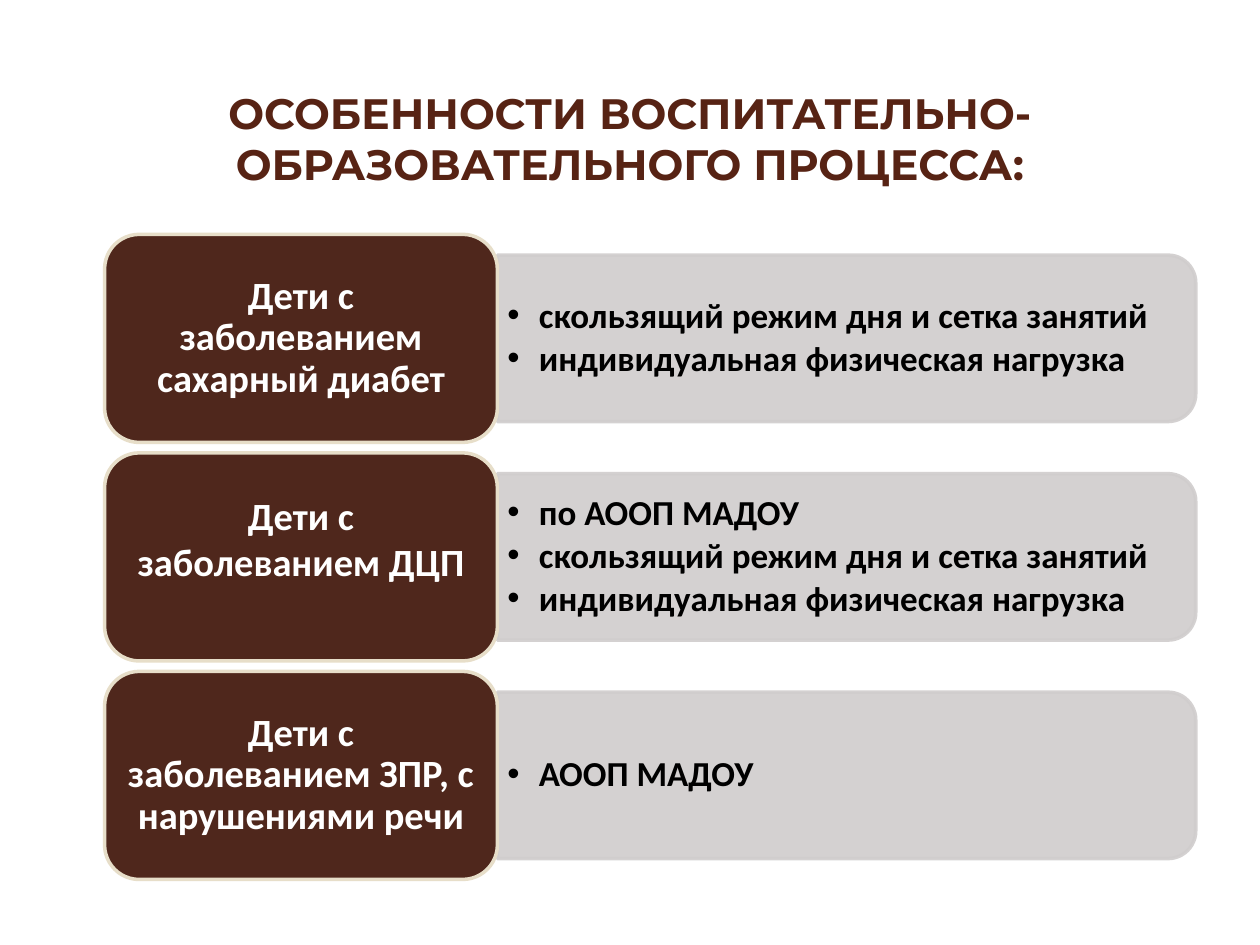
from dataclasses import dataclass

from lxml.etree import SubElement
from pptx import Presentation
from pptx.dml.color import RGBColor
from pptx.enum.shapes import MSO_SHAPE
from pptx.enum.text import MSO_ANCHOR, PP_ALIGN
from pptx.oxml.ns import qn
from pptx.util import Inches, Pt


@dataclass(frozen=True)
class Theme:
    title_color: RGBColor = RGBColor(0x57, 0x23, 0x14)
    label_fill: RGBColor = RGBColor(0x4F, 0x27, 0x1C)
    label_line: RGBColor = RGBColor(0xE7, 0xDE, 0xC9)
    label_text: RGBColor = RGBColor(0xFF, 0xFF, 0xFF)
    panel: RGBColor = RGBColor(0xD0, 0xCD, 0xCD)
    panel_text: RGBColor = RGBColor(0, 0, 0)
    title_font: str = "Montserrat"
    body_font: str = "Calibri"
    title_size: float = 24.3
    label_size: float = 22
    panel_size: float = 20
    outline: float = 2


THEME = Theme()

TITLE = "ОСОБЕННОСТИ ВОСПИТАТЕЛЬНО-ОБРАЗОВАТЕЛЬНОГО ПРОЦЕССА:"
SCHEDULE = "скользящий режим дня и сетка занятий"
EXERCISE = "индивидуальная физическая нагрузка"
# Label, its line spacing, extra room under it, measures
GROUPS = [
    ("Дети с заболеванием сахарный диабет", 0.9, 0, [SCHEDULE, EXERCISE]),
    ("Дети с заболеванием ДЦП", 1.0, 0.3, ["по АООП МАДОУ", SCHEDULE, EXERCISE]),
    ("Дети с заболеванием ЗПР, с нарушениями речи", 0.9, 0, ["АООП МАДОУ"]),
]


def add_run(paragraph, text, font, size, color):
    run = paragraph.add_run()
    run.text = text
    run.font.name = font
    run.font.size = Pt(size)
    run.font.bold = True
    run.font.color.rgb = color


def set_frame(frame, anchor, side, top, bottom):
    frame.word_wrap = True
    frame.vertical_anchor = anchor
    frame.margin_left = frame.margin_right = Inches(side)
    frame.margin_top, frame.margin_bottom = Inches(top), Inches(bottom)


def paint(shape, fill, line):
    shape.shadow.inherit = False
    shape.fill.solid()
    shape.fill.fore_color.rgb = fill
    shape.line.color.rgb = line
    shape.line.width = Pt(THEME.outline)


def add_bullet(paragraph):
    properties = paragraph._p.get_or_add_pPr()
    properties.set("marL", str(Inches(0.25)))
    properties.set("indent", str(Inches(-0.25)))
    SubElement(properties, qn("a:buFont"), typeface="Arial")
    SubElement(properties, qn("a:buChar"), char="•")


def add_title(slide, left, top, width, height):
    frame = slide.shapes.add_textbox(
        Inches(left), Inches(top), Inches(width), Inches(height)).text_frame
    set_frame(frame, MSO_ANCHOR.BOTTOM, 0.1, 0.05, 0.05)
    paragraph = frame.paragraphs[0]
    paragraph.alignment = PP_ALIGN.CENTER
    add_run(paragraph, TITLE, THEME.title_font, THEME.title_size, THEME.title_color)


def add_panel(slide, left, top, width, height, measures):
    """Grey panel, rounded on its right side, with a bulleted list."""
    # A quarter turn swaps the sides around the same centre.
    panel = slide.shapes.add_shape(
        MSO_SHAPE.ROUND_2_SAME_RECTANGLE,
        Inches(left + (width - height) / 2), Inches(top + (height - width) / 2),
        Inches(height), Inches(width))
    panel.rotation = 90
    paint(panel, THEME.panel, THEME.panel)
    for color in panel._element.spPr.iter(qn("a:srgbClr")):
        SubElement(color, qn("a:alpha"), val="90000")

    frame = slide.shapes.add_textbox(
        Inches(left), Inches(top), Inches(width), Inches(height)).text_frame
    set_frame(frame, MSO_ANCHOR.MIDDLE, 0.08, 0.04, 0.04)
    for index, measure in enumerate(measures):
        paragraph = frame.add_paragraph() if index else frame.paragraphs[0]
        paragraph.line_spacing = 0.9
        paragraph.space_after = Pt(3)
        add_bullet(paragraph)
        add_run(paragraph, measure, THEME.body_font, THEME.panel_size, THEME.panel_text)


def add_label(slide, left, top, width, height, text, spacing, room_below):
    label = slide.shapes.add_shape(
        MSO_SHAPE.ROUNDED_RECTANGLE,
        Inches(left), Inches(top), Inches(width), Inches(height))
    paint(label, THEME.label_fill, THEME.label_line)
    set_frame(label.text_frame, MSO_ANCHOR.MIDDLE, 0.09, 0.05, 0.05 + room_below)
    paragraph = label.text_frame.paragraphs[0]
    paragraph.alignment = PP_ALIGN.CENTER
    paragraph.line_spacing = spacing
    add_run(paragraph, text, THEME.body_font, THEME.label_size, THEME.label_text)


def add_groups(slide, left, top, width, height):
    """Rows of a label and its panel, parted by gaps of 5% of a row."""
    row_height = height / (len(GROUPS) * 1.05 - 0.05)
    label_width = width * 0.36
    panel_height = row_height * 0.8
    for index, (text, spacing, room_below, measures) in enumerate(GROUPS):
        row_top = top + index * row_height * 1.05
        add_panel(slide, left + label_width, row_top + (row_height - panel_height) / 2,
                  width - label_width, panel_height, measures)
        add_label(slide, left, row_top, label_width, row_height,
                  text, spacing, room_below)


def main():
    presentation = Presentation()
    presentation.slide_width, presentation.slide_height = Inches(10), Inches(7.5)
    slide = presentation.slides.add_slide(presentation.slide_layouts[6])
    add_title(slide, 1.14, 0.92, 7.72, 0.63)
    add_groups(slide, 0.83, 1.86, 8.66, 5.12)
    presentation.save("out.pptx")


if __name__ == "__main__":
    main()
